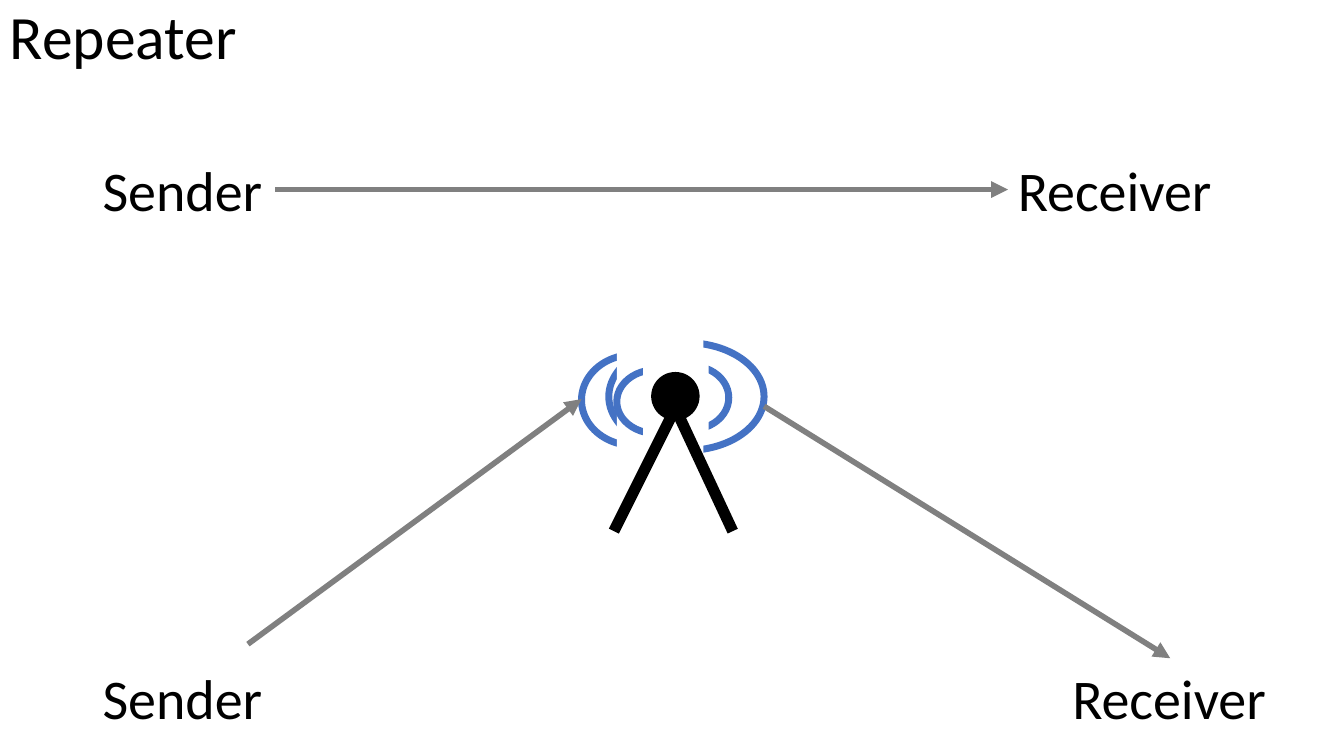
from dataclasses import dataclass

from lxml import etree
from pptx import Presentation, util as u
from pptx.dml.color import RGBColor
from pptx.enum import shapes, text
from pptx.oxml import ns

BLACK = RGBColor(0x00, 0x00, 0x00)
WHITE = RGBColor(0xFF, 0xFF, 0xFF)
BLUE = RGBColor(0x44, 0x72, 0xC4)
GRAY = RGBColor(0x80, 0x80, 0x80)
FONT = "Calibri"
WAVE_WIDTH = 5


@dataclass
class Area:
    left: float
    top: float
    width: float
    height: float

    def lengths(self) -> list[u.Length]:
        return [u.Pt(v) for v in (self.left, self.top, self.width, self.height)]


@dataclass
class Wave:
    """A ring, with the white mask that leaves only one side of it."""
    ring: Area
    mask: Area | None = None


@dataclass
class Label:
    wording: str
    area: Area
    size: float = 40
    wrap: bool = False
    spacing: float = 1.0


@dataclass
class Stroke:
    start: tuple[float, float]
    end: tuple[float, float]
    color: RGBColor
    width: float
    arrow: bool = False


def add_solid(page, kind, area: Area, color: RGBColor) -> None:
    shape = page.shapes.add_shape(kind, *area.lengths())
    shape.shadow.inherit = False
    shape.fill.solid()
    shape.fill.fore_color.rgb = color
    shape.line.fill.background()


def add_wave(page, wave: Wave) -> None:
    ring = page.shapes.add_shape(shapes.MSO_SHAPE.OVAL, *wave.ring.lengths())
    ring.shadow.inherit = False
    ring.fill.background()
    ring.line.color.rgb = BLUE
    ring.line.width = u.Pt(WAVE_WIDTH)
    if wave.mask:
        add_solid(page, shapes.MSO_SHAPE.RECTANGLE, wave.mask, WHITE)


def add_label(page, label: Label) -> None:
    box = page.shapes.add_textbox(*label.area.lengths())
    frame = box.text_frame
    frame.word_wrap = label.wrap
    frame.vertical_anchor = text.MSO_ANCHOR.MIDDLE if label.wrap else text.MSO_ANCHOR.TOP
    para = frame.paragraphs[0]
    para.line_spacing = label.spacing
    span = para.add_run()
    span.text = label.wording
    span.font.name = FONT
    span.font.size = u.Pt(label.size)
    span.font.color.rgb = BLACK


def add_stroke(page, stroke: Stroke) -> None:
    points = [u.Pt(v) for v in (*stroke.start, *stroke.end)]
    line = page.shapes.add_connector(shapes.MSO_CONNECTOR.STRAIGHT, *points)
    line.line.color.rgb = stroke.color
    line.line.width = u.Pt(stroke.width)
    if stroke.arrow:
        outline = line.line._get_or_add_ln()
        etree.SubElement(outline, ns.qn("a:tailEnd"), type="triangle")
    etree.SubElement(line._element.spPr, ns.qn("a:effectLst"))


# Radio waves, from back to front
WAVES = [
    Wave(Area(434.9, 244.8, 110.9, 77)),
    Wave(Area(467.3, 261.4, 53.3, 45.4), Area(460.1, 249.8, 44.6, 61.9)),
    Wave(Area(415.4, 253.4, 74.2, 64.8), Area(440.6, 239.8, 61.9, 87.8)),
    Wave(Area(440.6, 264.2, 55.4, 45.4), Area(459.4, 254.9, 46.8, 61.9)),
]

# Antenna mast
MAST_TOP = (482.4, 291.6)
LEGS = [Stroke((x, 379.4), MAST_TOP, BLACK, 8) for x in (438.5, 523.4)]
ANTENNA_HEAD = Area(465.1, 265.7, 34.6, 34.6)

# Title and the two ends of each route
TITLE = Label("Repeater", Area(0, -23.8, 828, 104.4), 44, True, 0.9)
ROUTE_ENDS = [
    Label(wording, Area(left, top, width, 55.4))
    for top, receiver_left in ((470.2, 758.9), (107.3, 720))
    for wording, left, width in (("Sender", 66.2, 129.6), ("Receiver", receiver_left, 154.1))
]

# Signal paths: through the repeater, then direct
SIGNALS = [
    Stroke(start, end, GRAY, 4, True)
    for start, end in (
        ((177.1, 460.1), (415.4, 285.1)),
        ((545.8, 290.2), (835.9, 470.2)),
        ((196.6, 135.4), (720, 135.4)),
    )
]


def main() -> None:
    deck = Presentation()
    deck.slide_width, deck.slide_height = u.Pt(960), u.Pt(540)
    page = deck.slides.add_slide(deck.slide_layouts[6])

    for wave in WAVES:
        add_wave(page, wave)
    for leg in LEGS:
        add_stroke(page, leg)
    add_solid(page, shapes.MSO_SHAPE.OVAL, ANTENNA_HEAD, BLACK)
    for label in [TITLE, *ROUTE_ENDS]:
        add_label(page, label)
    for signal in SIGNALS:
        add_stroke(page, signal)

    deck.save("out.pptx")


if __name__ == "__main__":
    main()
